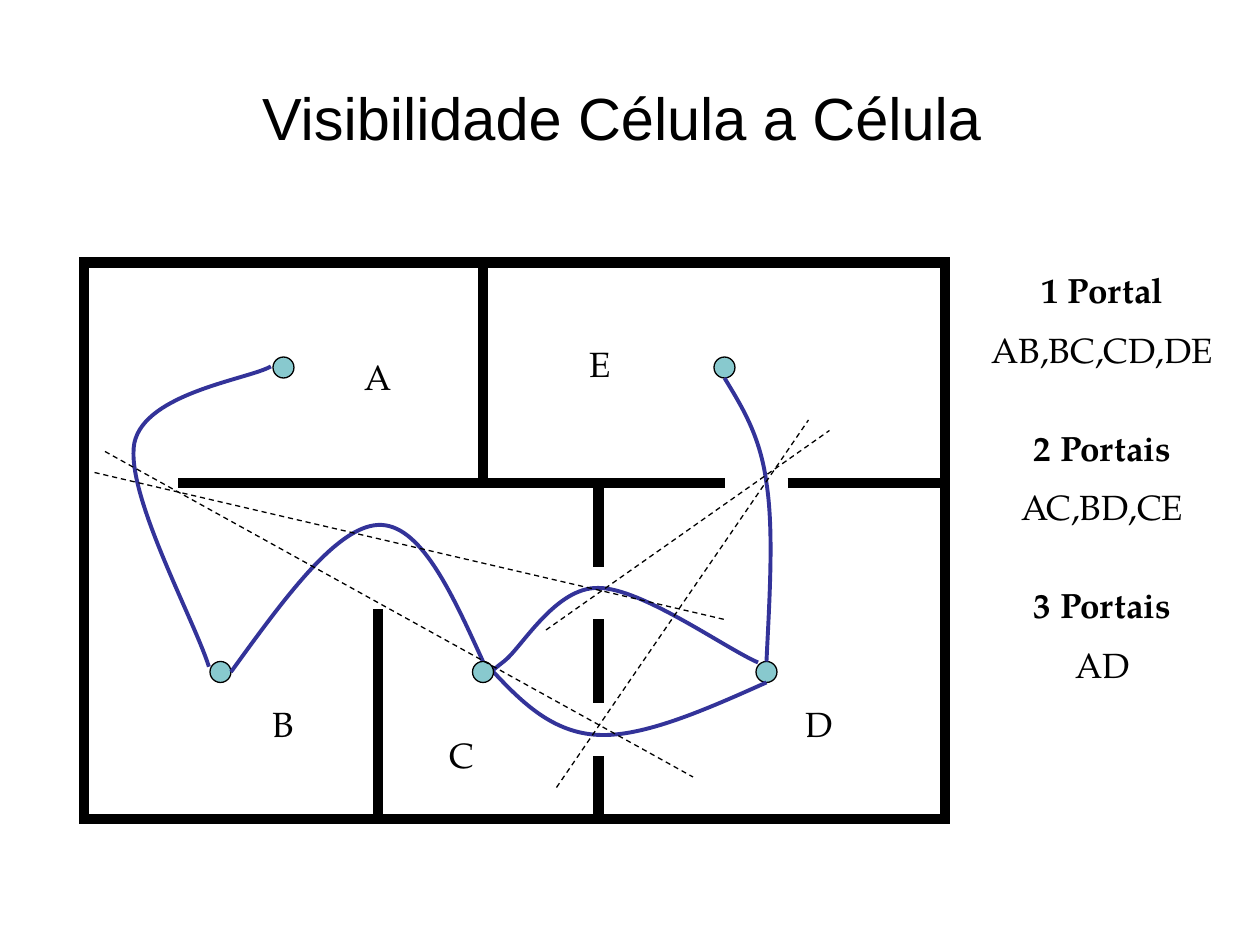
"""Build the cell-to-cell visibility slide on a grid of 120 columns by 90 rows."""
import pptx
import pptx.dml.color
import pptx.enum.dml
import pptx.enum.shapes
import pptx.enum.text
import pptx.oxml.ns
import pptx.util
import lxml.etree

BLACK = pptx.dml.color.RGBColor(0x00, 0x00, 0x00)
TEAL = pptx.dml.color.RGBColor(0x88, 0xC9, 0xCE)
BLUE = pptx.dml.color.RGBColor(0x33, 0x33, 0x99)
SERIF = "TeX Gyre Pagella"
KIND = pptx.enum.shapes.MSO_SHAPE
FIT = pptx.enum.text.MSO_AUTO_SIZE
ANCHOR = pptx.enum.text.MSO_ANCHOR
tag = pptx.oxml.ns.qn

deck = pptx.Presentation()
deck.slide_width = pptx.util.Inches(10)
deck.slide_height = pptx.util.Inches(7.5)
slide = deck.slides.add_slide(deck.slide_layouts[6])
shapes = slide.shapes
unit = deck.slide_width / 120


def draw_line(ends, width, dash=None):
    x1, y1, x2, y2 = [round(v * unit) for v in ends]
    line = shapes.add_connector(pptx.enum.shapes.MSO_CONNECTOR.STRAIGHT, x1, y1, x2, y2)
    line.line.color.rgb = BLACK
    line.line.width = pptx.util.Pt(width)
    line.line.dash_style = dash
    lxml.etree.SubElement(line._element.spPr, tag("a:effectLst"))


def add_text(spot, rows, size, font, wrap=True, fit=FIT.SHAPE_TO_FIT_TEXT):
    box = shapes.add_textbox(*[round(v * unit) for v in spot])
    frame = box.text_frame
    frame.word_wrap = wrap
    frame.auto_size = fit
    frame.vertical_anchor = ANCHOR.MIDDLE if fit == FIT.NONE else ANCHOR.TOP
    for i, (text, bold) in enumerate(rows):
        para = frame.add_paragraph() if i else frame.paragraphs[0]
        para.alignment = pptx.enum.text.PP_ALIGN.CENTER
        if i:
            para.space_before = pptx.util.Pt(size / 2)
        run = para.add_run()
        run.text = text
        run.font.name = font
        run.font.size = pptx.util.Pt(size)
        run.font.bold = bold
        run.font.color.rgb = BLACK


add_text((6, 3.6, 108, 15), [("Visibilidade Célula a Célula ", False)], 34, "Arial", fit=FIT.NONE)

room = shapes.add_shape(KIND.RECTANGLE, *[round(v * unit) for v in (8, 25, 82, 53)])
room.shadow.inherit = False
room.fill.background()
room.line.color.rgb = BLACK
room.line.width = pptx.util.Pt(6)
lxml.etree.SubElement(room._element.spPr.find(tag("a:ln")), tag("a:miter"), lim="800000")

walls = [
    (36, 78, 36, 58), (17, 46, 69, 46), (57, 46, 57, 54), (57, 72, 57, 78),
    (46, 46, 46, 32), (46, 33, 46, 25), (57, 59, 57, 67), (75, 46, 90, 46),
]
for wall in walls:
    draw_line(wall, 6)


nodes = [(26, 34), (68, 34), (20, 63), (72, 63), (45, 63)]
for x, y in nodes:
    node = shapes.add_shape(KIND.OVAL, *[round(v * unit) for v in (x, y, 2, 2)])
    node.shadow.inherit = False
    node.fill.solid()
    node.fill.fore_color.rgb = TEAL
    node.line.color.rgb = BLACK
    node.line.width = pptx.util.Pt(0.75)

routes = [
    [(25.8, 34.9), (23.8, 36.1), (13.8, 37.4), (12.8, 42.2), (11.9, 47), (18.5, 59), (19.9, 63.5)],
    [(22, 64), (27, 57.1), (32, 50.2), (36, 50), (40, 49.8), (43, 56.4), (46, 63)],
    [(47, 64), (46.7, 64.2), (46.3, 64.3), (48, 63), (49.7, 61.7),
     (52.9, 55.9), (57, 56), (61.1, 56), (69, 61.7), (72.2, 63.1)],
    [(47, 64), (49.8, 67), (52.7, 69.8), (57, 70), (61.3, 70.2), (67.2, 67.6), (73, 65)],
    [(73, 63), (73.3, 56.8), (73.7, 50.5), (73, 46), (72.4, 41.5), (70.7, 38.8), (69, 36)],
]
for route in routes:
    first, *rest = [(x * unit, y * unit) for x, y in route]
    pen = shapes.build_freeform(*first)
    pen.add_line_segments(rest, close=False)
    curve = pen.convert_to_shape()
    curve.shadow.inherit = False
    curve.fill.background()
    curve.line.color.rgb = BLUE
    curve.line.width = pptx.util.Pt(2.25)
    legs = list(curve._element.spPr.iter(tag("a:lnTo")))
    for k in range(0, len(legs), 3):
        bend = lxml.etree.Element(tag("a:cubicBezTo"))
        legs[k].addprevious(bend)
        for leg in legs[k:k + 3]:
            bend.append(leg[0])
            leg.getparent().remove(leg)

last = shapes[len(walls) + len(nodes) + 1]._element
shapes[-1]._element.addnext(last)

for sight in [(10, 43, 66, 74), (53, 75, 77, 40), (52, 60, 79, 41), (9, 45, 69, 59)]:
    draw_line(sight, 0.75, pptx.enum.dml.MSO_LINE.DASH)

cells = [("A", 36, 33.3, 5), ("B", 27, 66.3, 4.4), ("C", 44, 69.3, 4.8), ("D", 78, 66.3, 5), ("E", 57.2, 32, 4.4)]
for name, mid, top, wide in cells:
    add_text((mid - wide / 2, top, wide, 5.2), [(name, False)], 20, SERIF, wrap=False)

lists = [("1 Portal", "AB,BC,CD,DE"), ("2 Portais", "AC,BD,CE"), ("3 Portais", "AD")]
for i, (head, pairs) in enumerate(lists):
    add_text((93, 25 + 15 * i, 24, 11.2), [(head, True), (pairs, False)], 20, SERIF)

deck.save("out.pptx")
